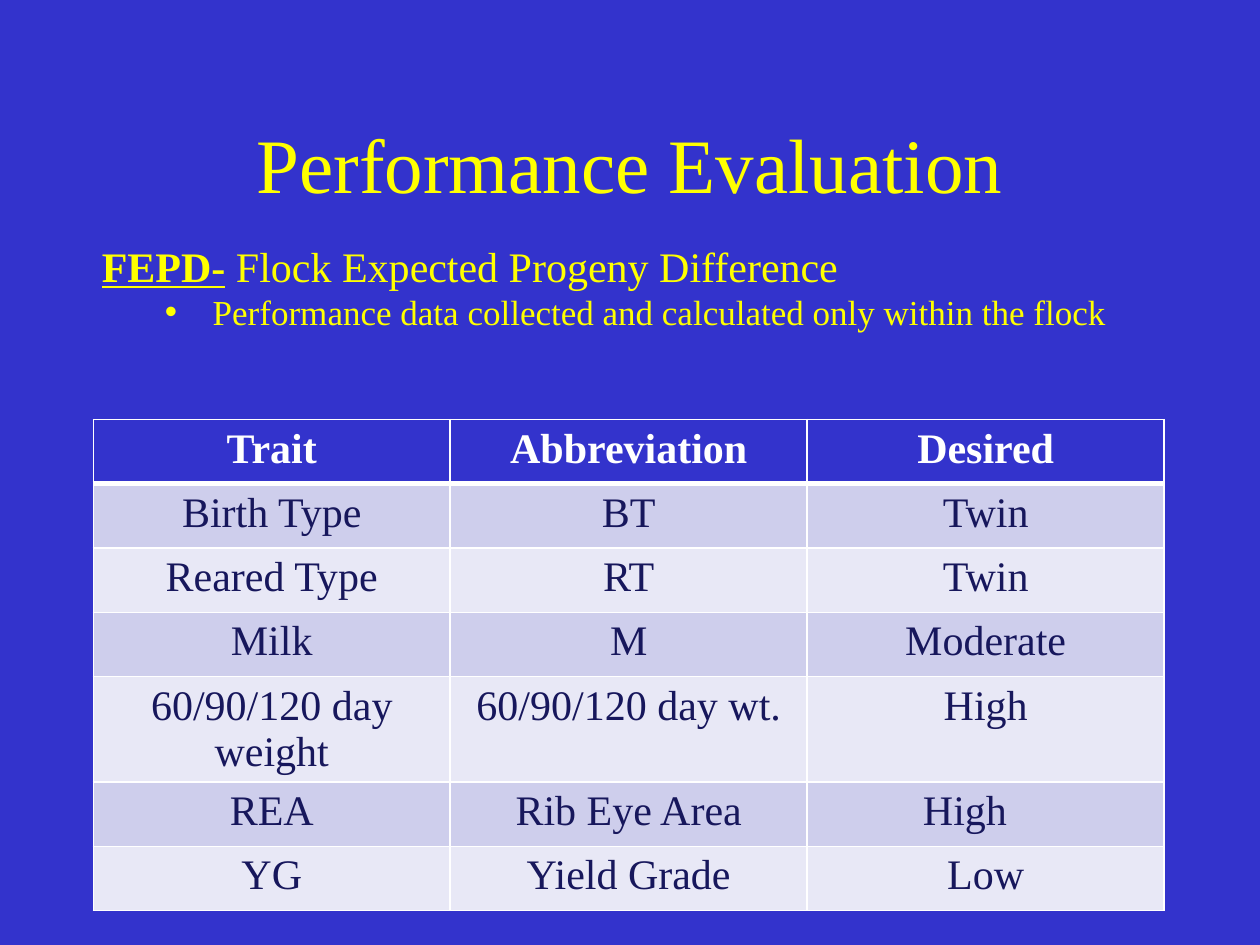
"""Build a slide that explains flock expected progeny differences."""
import pptx
import pptx.dml.color
import pptx.enum.text
import pptx.oxml
import pptx.oxml.ns
import pptx.util

Inches = pptx.util.Inches
ALIGN = pptx.enum.text.PP_ALIGN
COLORS = {
    "blue": "3333CC",
    "yellow": "FFFF00",
    "white": "FFFFFF",
    "navy": "17175C",
    "odd": "CECEEC",
    "even": "E8E8F6",
}
TRAITS = [
    ("Trait", "Abbreviation", "Desired"),
    ("Birth Type", "BT", "Twin"),
    ("Reared Type", "RT", "Twin"),
    ("Milk", "M", "Moderate"),
    ("60/90/120 day weight", "60/90/120 day wt.", "High"),
    ("REA", "Rib Eye Area", "High"),
    ("YG", "Yield Grade", "Low"),
]


def rgb(name):
    return pptx.dml.color.RGBColor.from_string(COLORS[name])


def add_span(para, text, size=24, color="yellow", bold=False, underline=False):
    span = para.add_run()
    span.text = text
    font = span.font
    font.name = "Times New Roman"
    font.size = pptx.util.Pt(size)
    font.bold = bold
    font.underline = underline
    font.color.rgb = rgb(color)


def add_xml(parent, xml):
    namespaces = pptx.oxml.ns.nsdecls("a")
    parent.append(pptx.oxml.parse_xml(xml.replace("XMLNS", namespaces)))


class SlideBuilder:
    def __init__(self, deck):
        self.slide = deck.slides.add_slide(deck.slide_layouts[5])
        fill = self.slide.background.fill
        fill.solid()
        fill.fore_color.rgb = rgb("blue")

    def title(self, text, left, top, width, height):
        box = self.slide.shapes.title
        box.left, box.top, box.width, box.height = map(Inches, (left, top, width, height))
        frame = box.text_frame
        frame.vertical_anchor = pptx.enum.text.MSO_ANCHOR.MIDDLE
        para = frame.paragraphs[0]
        para.alignment = ALIGN.CENTER
        add_span(para, text, size=44)

    def definition(self, term, meaning, detail, left, top, width, height):
        box = self.slide.shapes.add_textbox(*map(Inches, (left, top, width, height)))
        frame = box.text_frame
        frame.word_wrap = True
        frame.auto_size = pptx.enum.text.MSO_AUTO_SIZE.SHAPE_TO_FIT_TEXT
        para = frame.paragraphs[0]
        add_span(para, term, bold=True, underline=True)
        add_span(para, " ", bold=True)
        add_span(para, meaning)
        bullet = frame.add_paragraph()
        bullet.level = 1
        properties = bullet._p.get_or_add_pPr()
        properties.set("marL", str(Inches(0.88)))
        properties.set("indent", str(Inches(-0.38)))
        add_xml(properties, '<a:buFont XMLNS typeface="Arial"/>')
        add_xml(properties, '<a:buChar XMLNS char="•"/>')
        add_span(bullet, detail, size=20)

    def borders(self, cell, **widths):
        for side, points in widths.items():
            add_xml(
                cell._tc.get_or_add_tcPr(),
                f'<a:ln{side} XMLNS w="{pptx.util.Pt(points)}"><a:solidFill>'
                f'<a:srgbClr val="{COLORS["white"]}"/></a:solidFill></a:ln{side}>',
            )

    def table(self, rows, left, top, width, row_height):
        size = map(Inches, (left, top, width, row_height * len(rows)))
        table = self.slide.shapes.add_table(len(rows), len(rows[0]), *size).table
        for row_index, texts in enumerate(rows):
            table.rows[row_index].height = Inches(row_height)
            header = row_index == 0
            fill = "blue" if header else "odd" if row_index % 2 else "even"
            for column_index, text in enumerate(texts):
                cell = table.cell(row_index, column_index)
                self.borders(cell, L=1, R=1, T=3 if row_index == 1 else 1, B=3 if header else 1)
                cell.fill.solid()
                cell.fill.fore_color.rgb = rgb(fill)
                para = cell.text_frame.paragraphs[0]
                para.alignment = ALIGN.CENTER
                add_span(para, text, color="white" if header else "navy", bold=header)
        return table


def main():
    deck = pptx.Presentation()
    deck.slide_width, deck.slide_height = Inches(10), Inches(7.5)
    builder = SlideBuilder(deck)
    builder.title("Performance Evaluation", 0.75, 0.67, 8.5, 1.25)
    traits = builder.table(TRAITS, 0.74, 3.33, 8.5, 0.51)
    traits.cell(5, 2).margin_right = Inches(0.43)
    builder.definition(
        "FEPD-",
        "Flock Expected Progeny Difference",
        "Performance data collected and calculated only within the flock",
        0.71, 1.86, 8.42, 0.84,
    )
    deck.save("out.pptx")


if __name__ == "__main__":
    main()
